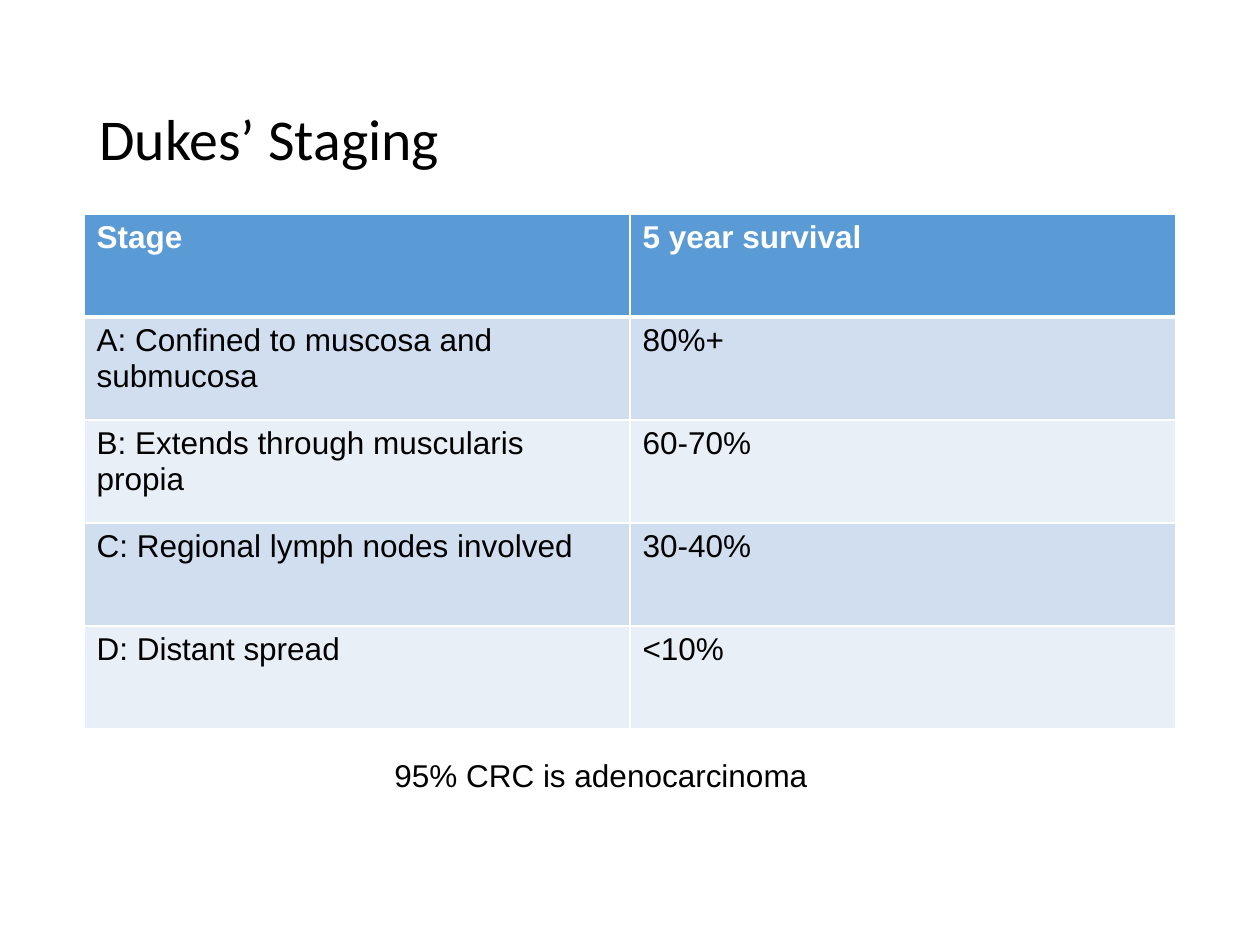
from lxml import etree
from pptx import Presentation
from pptx.dml.color import RGBColor
from pptx.enum.text import MSO_ANCHOR
from pptx.oxml.ns import qn
from pptx.util import Pt

# Content
TITLE = "Dukes’ Staging"
STAGES = [
    ("Stage", "5 year survival"),
    ("A: Confined to muscosa and submucosa", "80%+"),
    ("B: Extends through muscularis propia", "60-70%"),
    ("C: Regional lymph nodes involved", "30-40%"),
    ("D: Distant spread", "<10%"),
]
FOOTNOTE = "95% CRC is adenocarcinoma"

BLACK = RGBColor(0x00, 0x00, 0x00)
WHITE = RGBColor(0xFF, 0xFF, 0xFF)
HEADER_BLUE = RGBColor(0x5B, 0x9B, 0xD5)
BANDS = [RGBColor(0xE9, 0xEF, 0xF7), RGBColor(0xD0, 0xDE, 0xEF)]

# Layout in px, 126 to the inch
EMU_PER_PX = 914400 // 126
SLIDE_W, SLIDE_H = 1260, 945
TITLE_BOX = (87, 50, 1086, 183)
TABLE_LEFT, TABLE_TOP = 84, 214
COLUMN_W, ROW_H = 546, 103
FOOTNOTE_BOX = (382, 750, 442, 50)


def px(length):
    return length * EMU_PER_PX


def write(frame, text, size=18, font="Arial", color=BLACK, bold=False, spacing=None):
    frame.word_wrap = True
    line = frame.paragraphs[0]
    line.line_spacing = spacing
    run = line.add_run()
    run.text = text
    run.font.size = Pt(size)
    run.font.name = font
    run.font.color.rgb = color
    run.font.bold = bold


def add_text(slide, box, text, anchor=MSO_ANCHOR.TOP, **text_format):
    frame = slide.shapes.add_textbox(*map(px, box)).text_frame
    frame.vertical_anchor = anchor
    write(frame, text, **text_format)


def set_borders(cell, **widths):
    properties = cell._tc.get_or_add_tcPr()
    for position, (side, width) in enumerate(widths.items()):
        border = etree.Element(qn(f"a:ln{side}"), w=str(Pt(width)))
        fill = etree.SubElement(border, qn("a:solidFill"))
        etree.SubElement(fill, qn("a:srgbClr"), val=str(WHITE))
        properties.insert(position, border)


def add_stage_table(slide):
    rows, columns = len(STAGES), len(STAGES[0])
    table = slide.shapes.add_table(
        rows, columns, px(TABLE_LEFT), px(TABLE_TOP),
        px(columns * COLUMN_W), px(rows * ROW_H)).table
    for column in table.columns:
        column.width = px(COLUMN_W)
    for r, stage in enumerate(STAGES):
        table.rows[r].height = px(ROW_H)
        header = r == 0
        for c, text in enumerate(stage):
            cell = table.cell(r, c)
            write(cell.text_frame, text, color=WHITE if header else BLACK, bold=header)
            cell.fill.solid()
            cell.fill.fore_color.rgb = HEADER_BLUE if header else BANDS[r % 2]
            # The rule under the header is thicker
            set_borders(cell, L=1, R=1, T=3 if r == 1 else 1, B=3 if header else 1)


def main():
    deck = Presentation()
    deck.slide_width, deck.slide_height = px(SLIDE_W), px(SLIDE_H)
    slide = deck.slides.add_slide(deck.slide_layouts[6])

    # Title, table and remark below it
    add_text(slide, TITLE_BOX, TITLE, anchor=MSO_ANCHOR.MIDDLE,
             size=33, font="Calibri", spacing=0.9)
    add_stage_table(slide)
    add_text(slide, FOOTNOTE_BOX, FOOTNOTE)

    deck.save("out.pptx")


if __name__ == "__main__":
    main()
